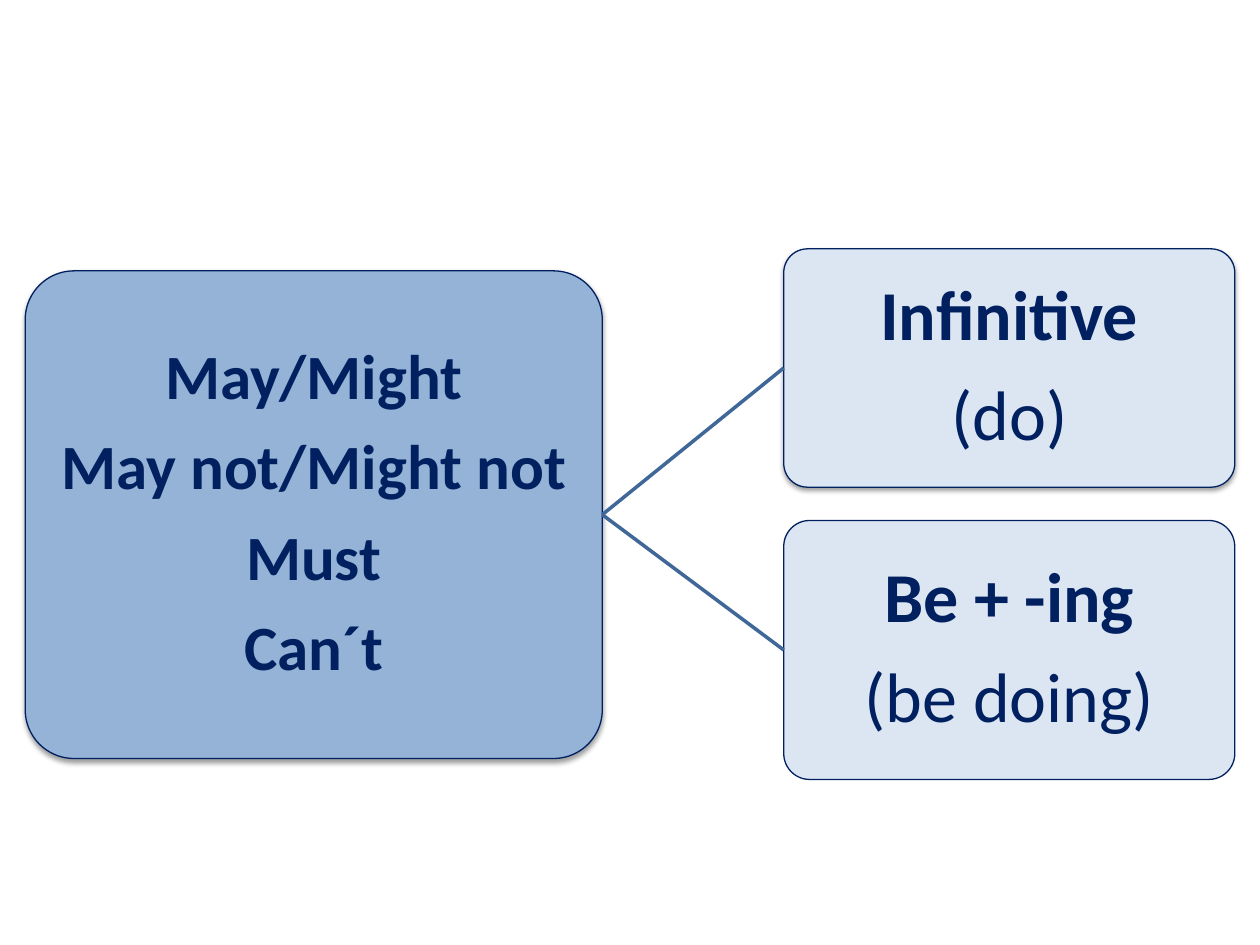
import pptx
import pptx.dml.color
import pptx.enum.shapes
import pptx.enum.text
import pptx.oxml
import pptx.oxml.ns
import pptx.util
from pptx.util import Pt

COLORS = {
    "modal": "95B3D7",
    "form": "DCE6F2",
    "navy": "002060",
    "branch": "3F6797",
}
FONT = "Calibri"
RIGHT_SITE, LEFT_SITE = 3, 1

# Each box is left, top, width, height in points
MODAL_BOX = (14.4, 154.8, 329.76, 278.64)
FORM_LEFT, FORM_WIDTH = 447.84, 257.76
MODALS = ["May/Might", "May not/Might not", "Must", "Can´t"]
# Top, height, form, example, shadow
FORMS = [
    (142.2, 136.2, "Infinitive", "(do)", True),
    (297.4, 148, "Be + -ing", "(be doing)", False),
]


def rgb(name):
    return pptx.dml.color.RGBColor.from_string(COLORS[name])


def add_soft_shadow(shape):
    shape.shadow.inherit = False
    effects = shape._element.spPr.find(pptx.oxml.ns.qn("a:effectLst"))
    effects.append(pptx.oxml.parse_xml(
        f'<a:outerShdw {pptx.oxml.ns.nsdecls("a")} blurRad="{Pt(3.1)}" '
        f'dist="{Pt(1.6)}" dir="5400000" rotWithShape="0">'
        '<a:srgbClr val="000000"><a:alpha val="38000"/></a:srgbClr>'
        '</a:outerShdw>'))


def add_card(slide, box, fill, lines, size, shadow):
    """Place a rounded card; lines are (text, bold) pairs."""
    shape = slide.shapes.add_shape(
        pptx.enum.shapes.MSO_SHAPE.ROUNDED_RECTANGLE, *map(Pt, box))
    shape.adjustments[0] = 0.1
    shape.fill.solid()
    shape.fill.fore_color.rgb = rgb(fill)
    shape.line.color.rgb = rgb("navy")
    shape.line.width = Pt(0.75)
    if shadow:
        add_soft_shadow(shape)
    else:
        shape.shadow.inherit = False

    frame = shape.text_frame
    frame.word_wrap = True
    frame.vertical_anchor = pptx.enum.text.MSO_ANCHOR.MIDDLE
    frame.margin_left = frame.margin_right = Pt(6)
    frame.margin_top = frame.margin_bottom = Pt(6)
    for index, (text, bold) in enumerate(lines):
        paragraph = frame.add_paragraph() if index else frame.paragraphs[0]
        paragraph.alignment = pptx.enum.text.PP_ALIGN.CENTER
        paragraph.line_spacing = 0.9
        paragraph.space_after = Pt(0.35 * size)
        run = paragraph.add_run()
        run.text = text
        run.font.name = FONT
        run.font.size = Pt(size)
        run.font.bold = bold
        run.font.color.rgb = rgb("navy")
    return shape


def add_branch(slide, start, end):
    connector = slide.shapes.add_connector(
        pptx.enum.shapes.MSO_CONNECTOR.STRAIGHT, 0, 0, 0, 0)
    # The connector sites are the middles of the facing sides
    connector.begin_connect(start, RIGHT_SITE)
    connector.end_connect(end, LEFT_SITE)
    connector.begin_x = start.left + start.width
    connector.begin_y = start.top + start.height // 2
    connector.end_x = end.left
    connector.end_y = end.top + end.height // 2
    connector.line.color.rgb = rgb("branch")
    connector.line.width = Pt(2)
    connector._element.spPr.append(
        pptx.oxml.parse_xml(f'<a:effectLst {pptx.oxml.ns.nsdecls("a")}/>'))


def add_modal_tree(slide):
    # Modal verbs on the left
    modal_card = add_card(slide, MODAL_BOX, "modal",
                          [(modal, True) for modal in MODALS], 36, True)
    # Verb forms on the right, each joined to the modal verbs
    for top, height, form, example, shadow in FORMS:
        form_card = add_card(slide, (FORM_LEFT, top, FORM_WIDTH, height),
                             "form", [(form, True), (example, False)],
                             40, shadow)
        add_branch(slide, modal_card, form_card)


def main():
    presentation = pptx.Presentation()
    presentation.slide_width = Pt(720)
    presentation.slide_height = Pt(540)
    slide = presentation.slides.add_slide(presentation.slide_layouts[6])
    add_modal_tree(slide)
    presentation.save("out.pptx")


if __name__ == "__main__":
    main()
